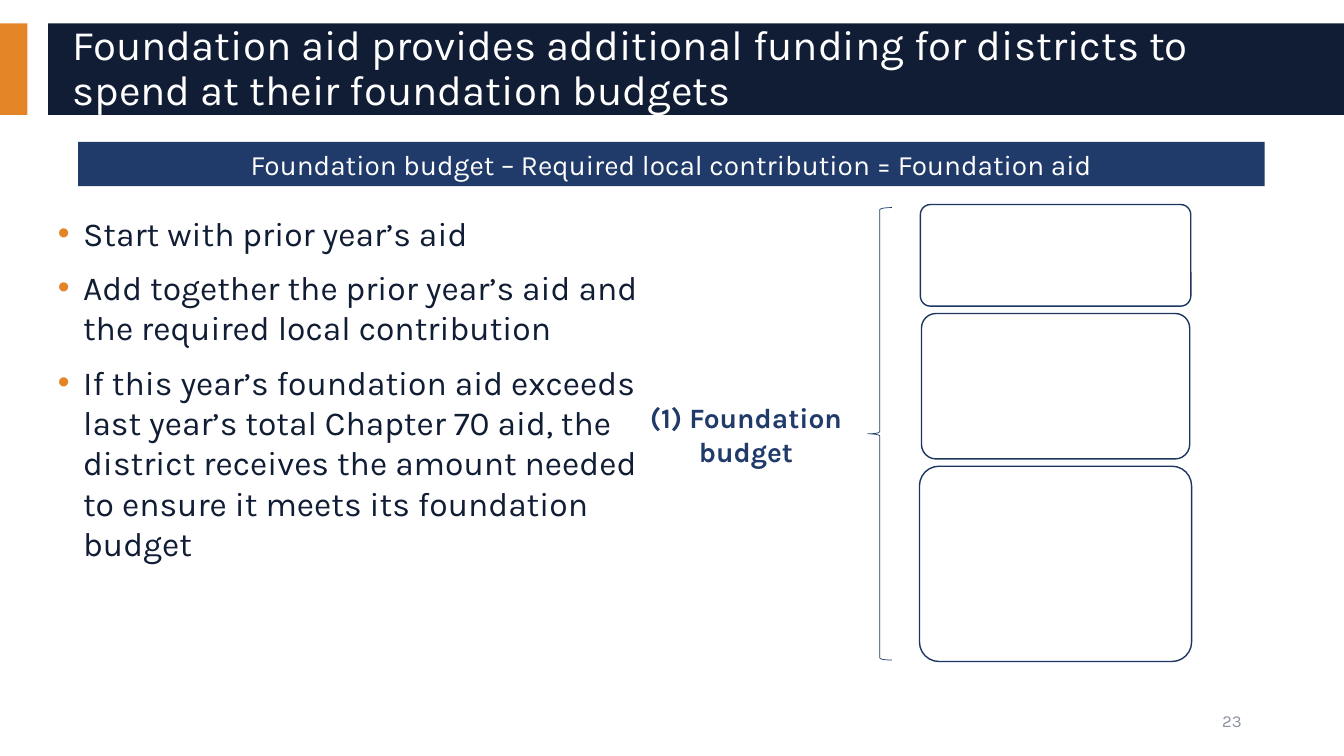
from lxml import etree
from pptx import Presentation
from pptx.dml.color import RGBColor
from pptx.enum import shapes, text
from pptx.oxml import ns
from pptx.util import Pt

COLORS = {
    "ink": "101D35",
    "navy": "203B6A",
    "outline": "1D3660",
    "orange": "E38526",
    "gray": "8D92A1",
    "white": "FFFFFF",
}
FONT = "Karla"
TITLE = "Foundation aid provides additional funding for districts to spend at their foundation budgets"
FORMULA = "Foundation budget – Required local contribution = Foundation aid"
STEPS = [
    "Start with prior year’s aid",
    "Add together the prior year’s aid and the required local contribution",
    "If this year’s foundation aid exceeds last year’s total Chapter 70 aid, the district "
    "receives the amount needed to ensure it meets its foundation budget",
]


def color(name):
    """Return the named palette color."""
    return RGBColor.from_string(COLORS[name])


def write(shape, *lines, size, ink, bold=False, align=text.PP_ALIGN.LEFT,
          anchor=text.MSO_ANCHOR.TOP, spacing=None, before=0, bullet=None):
    """Fill a shape with one formatted paragraph per line."""
    frame = shape.text_frame
    frame.word_wrap = True
    frame.auto_size = text.MSO_AUTO_SIZE.NONE
    frame.vertical_anchor = anchor
    frame.text = "\n".join(lines)
    for paragraph in frame.paragraphs:
        paragraph.alignment = align
        paragraph.space_before = Pt(before)
        paragraph.line_spacing = spacing
        if bullet:
            add_bullet(paragraph, bullet)
        font = paragraph.runs[0].font
        font.name, font.size, font.bold = FONT, Pt(size), bold
        font.color.rgb = color(ink)


def add_bullet(paragraph, ink, indent=18):
    """Give a paragraph a hanging colored bullet."""
    properties = paragraph._p.get_or_add_pPr()
    properties.set("marL", str(Pt(indent)))
    properties.set("indent", str(-Pt(indent)))
    bullet_color = etree.SubElement(properties, ns.qn("a:buClr"))
    etree.SubElement(bullet_color, ns.qn("a:srgbClr"), val=COLORS[ink])
    etree.SubElement(properties, ns.qn("a:buFont"), typeface="Arial")
    etree.SubElement(properties, ns.qn("a:buChar"), char="•")


def add_shape(parent, kind, left, top, width, height, fill=None, line=None, weight=1):
    """Add a flat preset shape with optional fill and outline."""
    shape = parent.shapes.add_shape(kind, Pt(left), Pt(top), Pt(width), Pt(height))
    shape.shadow.inherit = False
    if fill:
        shape.fill.solid()
        shape.fill.fore_color.rgb = color(fill)
    else:
        shape.fill.background()
    if line:
        shape.line.color.rgb = color(line)
        shape.line.width = Pt(weight)
    else:
        shape.line.fill.background()
    return shape


def add_text(slide, left, top, width, height, *lines, **style):
    """Add a text box with formatted lines."""
    box = slide.shapes.add_textbox(Pt(left), Pt(top), Pt(width), Pt(height))
    write(box, *lines, **style)


def add_header(slide, top, width, height):
    """Place the orange tab, the dark band and the title over it."""
    tab_width, band_left, inset = 19.6, 34.3, 10.3
    title = slide.shapes.title
    rectangle = shapes.MSO_SHAPE.RECTANGLE
    for left, bar_width, fill in ((0, tab_width, "orange"), (band_left, width - band_left, "ink")):
        bar = add_shape(slide, rectangle, left, top, bar_width, height, fill)
        title._element.addprevious(bar._element)
    title.left, title.width = Pt(band_left + inset), Pt(900)
    title.top, title.height = Pt(top + 6), Pt(height - 12)
    write(title, TITLE, size=30, ink="white", anchor=text.MSO_ANCHOR.MIDDLE, spacing=0.9)


def add_formula(slide, left, top, width, height):
    """Place the navy bar with the aid formula."""
    bar = add_shape(slide, shapes.MSO_SHAPE.RECTANGLE, left, top, width, height, "navy")
    write(bar, FORMULA, size=20, ink="white", align=text.PP_ALIGN.CENTER,
          anchor=text.MSO_ANCHOR.MIDDLE)


def add_budget_diagram(slide, left, top, width, height):
    """Place the budget label, the brace and the stacked boxes."""
    add_text(slide, left, top + 136.8, 157, 55.4, "(1) Foundation budget", size=20,
             ink="navy", bold=True, align=text.PP_ALIGN.CENTER)
    add_shape(slide, shapes.MSO_SHAPE.LEFT_BRACE, left + 165.5, top + 2.2, 17.3, height - 3.6,
              line="navy", weight=0.5)
    stack = slide.shapes.add_group_shape()
    center, gap = left + width - 97.2, 5.2
    for box_width, box_height in ((193.2, 72.6), (191.6, 103.9), (194.4, 139.5)):
        box = add_shape(stack, shapes.MSO_SHAPE.ROUNDED_RECTANGLE, center - box_width / 2, top,
                        box_width, box_height, "white", "outline")
        box.adjustments[0] = 0.1
        top += box_height + gap


def build_slide(presentation):
    """Build the foundation aid slide."""
    slide = presentation.slides.add_slide(presentation.slide_layouts[5])
    add_header(slide, 16.7, 960, 65.4)
    add_text(slide, 34.3, 148.3, 429, 323.3, *STEPS, size=24, ink="ink", before=10,
             bullet="orange")
    add_formula(slide, 55.9, 101.4, 847.4, 31.7)
    add_budget_diagram(slide, 454.3, 146.1, 396.9, 326.8)
    add_text(slide, 678.2, 500.5, 216, 28.8, "23", size=12, ink="gray",
             align=text.PP_ALIGN.RIGHT, anchor=text.MSO_ANCHOR.MIDDLE)


def main():
    """Create and save the presentation."""
    presentation = Presentation()
    presentation.slide_width, presentation.slide_height = Pt(960), Pt(540)
    build_slide(presentation)
    presentation.save("out.pptx")


if __name__ == "__main__":
    main()
